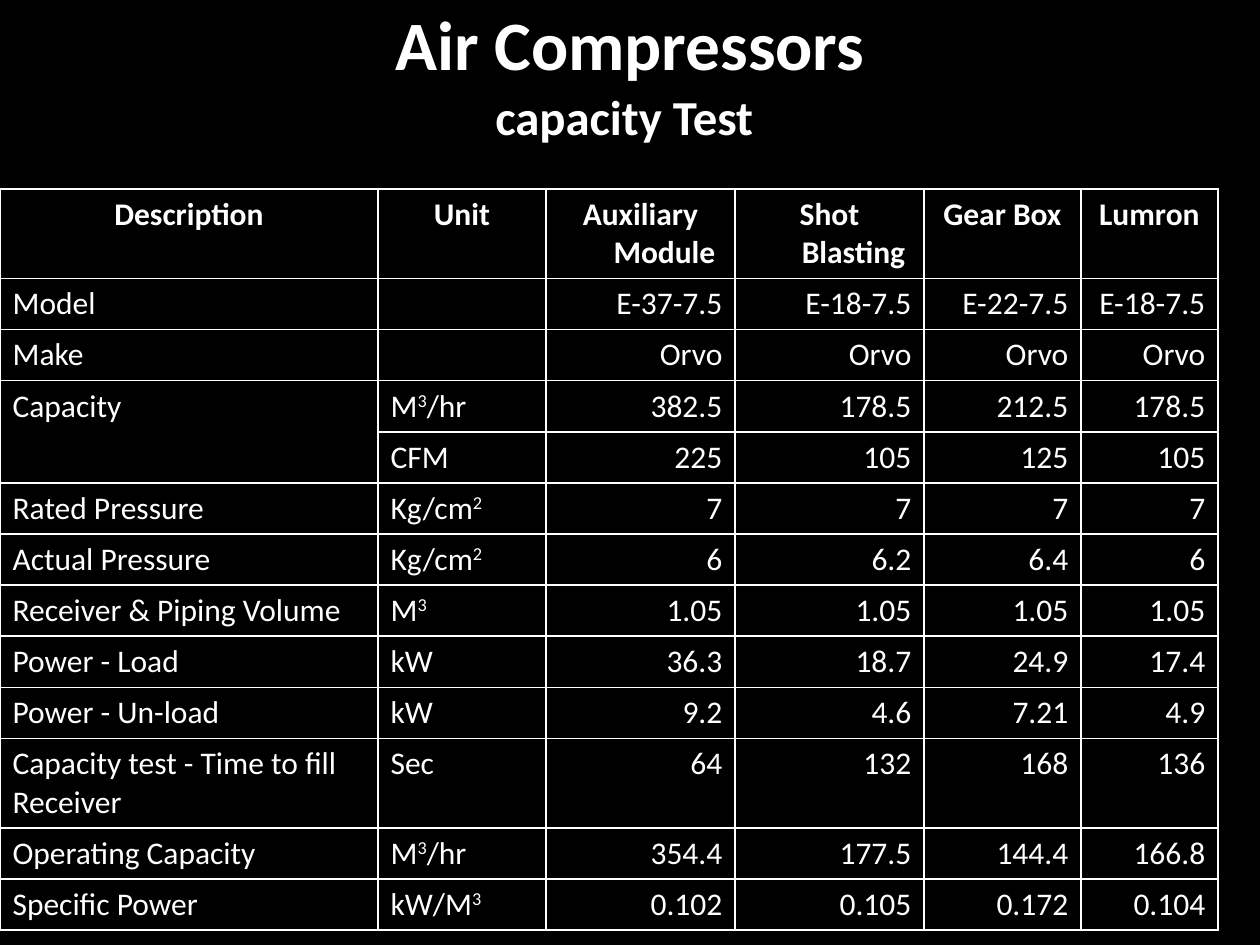
from dataclasses import dataclass

from lxml import etree
from pptx import Presentation
from pptx.dml.color import RGBColor
from pptx.enum import text
from pptx.oxml import ns
from pptx.util import Pt

SCALE = 914400 / 126
FONT = "Calibri"
BLACK = "000000"
WHITE = "FFFFFF"
INDENT = 48
LINE = 51
TALL = 89
COLS = [378, 168, 189, 189, 157, 137]
ALIGN = text.PP_ALIGN


@dataclass
class Row:
    label: str
    unit: str
    vals: list[str]
    high: int = LINE


ROWS = [
    Row("Description", "Unit", ["Auxiliary Module", "Shot Blasting", "Gear Box", "Lumron"], TALL),
    Row("Model", "", ["E-37-7.5", "E-18-7.5", "E-22-7.5", "E-18-7.5"]),
    Row("Make", "", ["Orvo"] * 4),
    Row("Capacity", "M^3^/hr", ["382.5", "178.5", "212.5", "178.5"]),
    Row("", "CFM", ["225", "105", "125", "105"]),
    Row("Rated Pressure", "Kg/cm^2", ["7"] * 4),
    Row("Actual Pressure", "Kg/cm^2", ["6", "6.2", "6.4", "6"]),
    Row("Receiver & Piping Volume", "M^3", ["1.05"] * 4),
    Row("Power - Load", "kW", ["36.3", "18.7", "24.9", "17.4"]),
    Row("Power - Un-load", "kW", ["9.2", "4.6", "7.21", "4.9"]),
    Row("Capacity test - Time to fill\nReceiver", "Sec", ["64", "132", "168", "136"], TALL),
    Row("Operating Capacity", "M^3^/hr", ["354.4", "177.5", "144.4", "166.8"]),
    Row("Specific Power", "kW/M^3", ["0.102", "0.105", "0.172", "0.104"]),
]


def px(num: int) -> int:
    return round(num * SCALE)


def color(code: str) -> RGBColor:
    return RGBColor.from_string(code)


def add_run(para, words: str, size: float, bold: bool, high: bool = False) -> None:
    run = para.add_run()
    run.text = words
    font = run.font
    font.name, font.size, font.bold = FONT, Pt(size), bold
    font.color.rgb = color(WHITE)
    if high:
        run._r.get_or_add_rPr().set("baseline", "30000")


def add_edge(cell) -> None:
    props = cell._tc.get_or_add_tcPr()
    for side in ("lnL", "lnR", "lnT", "lnB"):
        line = etree.SubElement(props, ns.qn(f"a:{side}"), w=str(Pt(1)))
        fill = etree.SubElement(line, ns.qn("a:solidFill"))
        etree.SubElement(fill, ns.qn("a:srgbClr"), val=WHITE)


def fill_cell(cell, words: str, align, bold: bool) -> None:
    add_edge(cell)
    cell.fill.background()
    frame = cell.text_frame
    for at, line in enumerate(words.split("\n")):
        para = frame.add_paragraph() if at else frame.paragraphs[0]
        para.alignment = align
        props = para._p.get_or_add_pPr()
        props.set("marL", str(px(INDENT)))
        props.set("indent", str(-px(INDENT)))
        for part, piece in enumerate(line.split("^")):
            if piece:
                add_run(para, piece, 18, bold, part % 2 == 1)


def add_title(slide) -> None:
    title = slide.shapes.title
    title.left, title.top, title.width, title.height = px(0), px(0), px(1260), px(147)
    frame = title.text_frame
    frame.auto_size = text.MSO_AUTO_SIZE.NONE
    frame.vertical_anchor = text.MSO_ANCHOR.MIDDLE
    para = frame.paragraphs[0]
    para.alignment = ALIGN.CENTER
    add_run(para, "Air Compressors", 39.6, True)
    para.add_line_break()
    add_run(para, "capacity Test", 27.9, True)
    add_run(para, " ", 28.8, True)


def add_grid(slide) -> None:
    high = sum(row.high for row in ROWS)
    shape = slide.shapes.add_table(len(ROWS), len(COLS), px(0), px(189), px(sum(COLS)), px(high))
    grid = shape.table
    grid.first_row = grid.horz_banding = False
    for col, wide in zip(grid.columns, COLS):
        col.width = px(wide)
    for at, row in enumerate(ROWS):
        grid.rows[at].height = px(row.high)
        head = at == 0
        for col, words in enumerate([row.label, row.unit, *row.vals]):
            side = ALIGN.LEFT if col < 2 else ALIGN.RIGHT
            fill_cell(grid.cell(at, col), words, ALIGN.CENTER if head else side, head)
    grid.cell(3, 0).merge(grid.cell(4, 0))


def main() -> None:
    deck = Presentation()
    deck.slide_width, deck.slide_height = px(1260), px(945)
    slide = deck.slides.add_slide(deck.slide_layouts[5])
    back = slide.background.fill
    back.solid()
    back.fore_color.rgb = color(BLACK)
    add_title(slide)
    add_grid(slide)
    deck.save("out.pptx")


if __name__ == "__main__":
    main()
